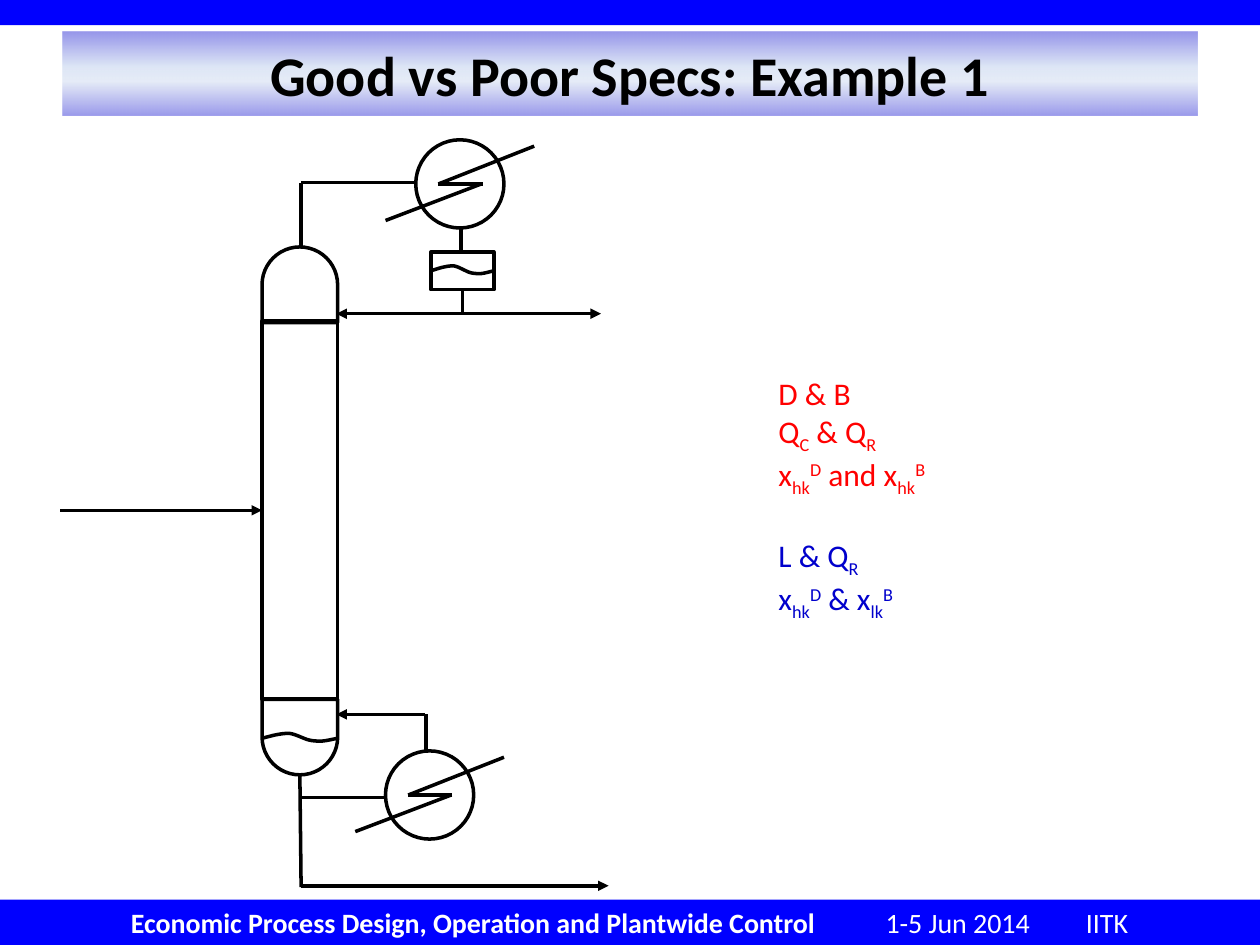
from lxml import etree
from pptx import Presentation, util as u
from pptx.dml.color import RGBColor
from pptx.enum import shapes, text
from pptx.oxml import parse_xml
from pptx.oxml.ns import nsdecls, qn

Inches = u.Inches


class Theme:
    font = "Calibri"
    black, white, blue = "000000", "FFFFFF", "0000FF"
    red, navy = "FF0000", "0000CC"
    head, foot, body = 32, 16, 18
    line = 2
    # position %, colour, opacity %
    grad = [(0, "0000CC", 41), (42, "AEC3E9", 40),
            (59, "C2D1ED", 40), (100, "0000CC", 39)]


def write(box, paras, size=Theme.body, color=Theme.black, bold=False,
          align=text.PP_ALIGN.LEFT, anchor=text.MSO_ANCHOR.MIDDLE, gaps={}):
    """Fill box with lists of runs; a run led by _ or ^ is sub- or superscript."""
    frame = box.text_frame
    frame.word_wrap = False
    frame.vertical_anchor = anchor
    for i, runs in enumerate(paras):
        para = frame.paragraphs[0] if i == 0 else frame.add_paragraph()
        para.alignment = align
        para.space_before = u.Pt(gaps.get(i, 0))
        for part in runs:
            run = para.add_run()
            run.text = part.lstrip("_^")
            run.font.name, run.font.size, run.font.bold = Theme.font, u.Pt(size), bold
            tint = color[i] if isinstance(color, list) else color
            run.font.color.rgb = RGBColor.from_string(tint)
            shift = {"_": "-25000", "^": "30000"}.get(part[0])
            if shift:
                run.font._element.set("baseline", shift)


def style(shape, fill=None, line=True):
    shape.shadow.inherit = False
    if fill:
        shape.fill.solid()
        shape.fill.fore_color.rgb = RGBColor.from_string(fill)
    else:
        shape.fill.background()
    if line:
        shape.line.color.rgb = RGBColor.from_string(Theme.black)
        shape.line.width = u.Pt(Theme.line)
    else:
        shape.line.fill.background()


deck = Presentation()
deck.slide_width, deck.slide_height = Inches(10), Inches(7.5)
slide = deck.slides.add_slide(deck.slide_layouts[6])
items = slide.shapes
kind = shapes.MSO_SHAPE

# Bars and footer
for top, high in [(0, 0.2), (7.14, 0.36)]:
    bar = items.add_shape(kind.RECTANGLE, 0, Inches(top), Inches(10), Inches(high))
    style(bar, Theme.blue, line=False)

for left, wide, words, bold in [
        (0.94, 5.7, "Economic Process Design, Operation and Plantwide Control", True),
        (6.93, 1.4, "1-5 Jun 2014", False), (8.52, 0.6, "IITK", False)]:
    note = items.add_textbox(Inches(left), Inches(7.14), Inches(wide), Inches(0.36))
    write(note, [[words]], size=Theme.foot, color=Theme.white, bold=bold)

# Title band
title = items.add_shape(kind.RECTANGLE, Inches(0.5), Inches(0.25), Inches(9), Inches(0.67))
style(title, Theme.white, line=False)
stops = "".join(
    f'<a:gs pos="{pos * 1000}"><a:srgbClr val="{tint}">'
    f'<a:alpha val="{alpha * 1000}"/></a:srgbClr></a:gs>'
    for pos, tint, alpha in Theme.grad)
solid = title._element.spPr.find(qn("a:solidFill"))
solid.getparent().replace(solid, parse_xml(
    f'<a:gradFill {nsdecls("a")}><a:gsLst>{stops}</a:gsLst>'
    '<a:lin ang="5400000" scaled="0"/></a:gradFill>'))
write(title, [["Good vs Poor Specs: Example 1"]], size=Theme.head, bold=True,
      align=text.PP_ALIGN.CENTER)

# Outlines
rounds = [(3.3, 1.11), (3.06, 5.96)]
parts = [
    (kind.RECTANGLE, 2.08, 2.55, 0.6, 3, 0),
    (kind.FLOWCHART_DELAY, 2.08, 1.96, 0.6, 0.6, 270),
    (kind.FLOWCHART_DELAY, 2.08, 5.55, 0.6, 0.6, 90),
    (kind.RECTANGLE, 3.42, 2, 0.5, 0.3, 0),
] + [(kind.OVAL, x, y, 0.7, 0.7, 0) for x, y in rounds]
for form, x, y, wide, high, turn in parts:
    part = items.add_shape(form, Inches(x), Inches(y), Inches(wide), Inches(high))
    part.rotation = turn
    style(part)

# Waves: three Bezier arcs, x as a share of the width
arcs = [[(0, 0.04), (0.12, 0.02), (0.24, 0), (0.36, 0)],
        [(0.36, 0), (0.48, 0.01), (0.58, 0.06), (0.7, 0.06)],
        [(0.7, 0.06), (0.8, 0.07), (0.9, 0.05), (1, 0.04)]]
steps = 10
for left, top, wide in [(3.42, 2.11, 0.5), (2.08, 5.82, 0.6)]:
    dots = []
    for arc in arcs:
        for n in range(steps + 1):
            t = n / steps
            mix = [(1 - t) ** 3, 3 * t * (1 - t) ** 2, 3 * t * t * (1 - t), t ** 3]
            x = sum(m * p[0] for m, p in zip(mix, arc))
            y = sum(m * p[1] for m, p in zip(mix, arc))
            dots.append((Inches(left + x * wide), Inches(top + y)))
    wave = items.build_freeform(*dots[0])
    wave.add_line_segments(dots[1:], close=False)
    style(wave.convert_to_shape())

# Lines: x1, y1, x2, y2, arrow ends
lines = [
    (2.39, 1.95, 2.39, 1.45, ""),
    (2.39, 1.45, 3.29, 1.45, ""),
    (3.66, 1.81, 3.66, 1.99, ""),
    (2.67, 2.49, 4.77, 2.49, "head tail"),
    (3.67, 2.3, 3.67, 2.49, ""),
    (2.38, 6.16, 2.39, 7.04, ""),
    (2.39, 7.03, 4.83, 7.03, "tail"),
    (2.39, 6.33, 3.06, 6.33, ""),
    (3.38, 5.67, 3.38, 5.97, ""),
    (3.37, 5.67, 2.67, 5.67, "tail"),
    (0.48, 4.05, 2.08, 4.05, "tail"),
]
for x, y in rounds:
    for x1, y1, x2, y2 in [(0.94, 0.05, 0.18, 0.35), (0.53, 0.35, 0.18, 0.35),
                           (0.52, 0.35, -0.24, 0.64)]:
        lines.append((x + x1, y + y1, x + x2, y + y2, ""))
for x1, y1, x2, y2, ends in lines:
    line = items.add_connector(shapes.MSO_CONNECTOR.STRAIGHT,
                               Inches(x1), Inches(y1), Inches(x2), Inches(y2))
    line.line.color.rgb = RGBColor.from_string(Theme.black)
    line.line.width = u.Pt(Theme.line)
    for end in ends.split():
        etree.SubElement(line.line._get_or_add_ln(), qn(f"a:{end}End"), type="triangle")
    etree.SubElement(line._element.spPr, qn("a:effectLst"))

# Text at the right
specs = items.add_textbox(Inches(6.08), Inches(2.92), Inches(1.45), Inches(1.92))
write(specs, [
    ["D & B"],
    ["Q", "_C", " & Q", "_R"],
    ["x", "_hk", "^D", " and x", "_hk", "^B"],
    ["L & Q", "_R"],
    ["x", "_hk", "^D", " & x", "_lk", "^B"],
], color=[Theme.red] * 3 + [Theme.navy] * 2, gaps={3: 22},
    anchor=text.MSO_ANCHOR.TOP)

deck.save("out.pptx")
